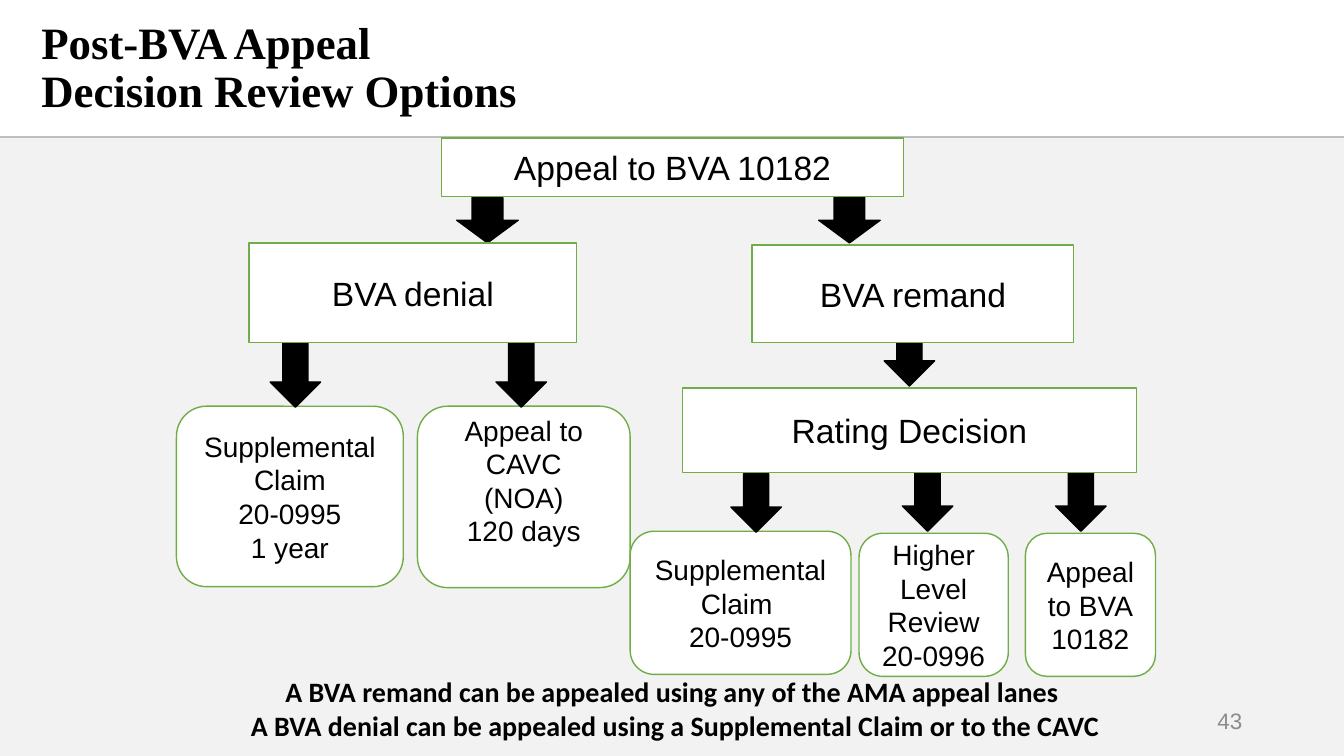
import pptx
import pptx.util
import pptx.dml.color
import pptx.enum.shapes
import pptx.enum.text
import pptx.oxml
from dataclasses import dataclass

Inches = pptx.util.Inches
SHAPE = pptx.enum.shapes.MSO_SHAPE
ALIGN = pptx.enum.text.PP_ALIGN
MIDDLE = pptx.enum.text.MSO_ANCHOR.MIDDLE


@dataclass(frozen=True)
class Theme:
    black: str = "000000"
    white: str = "FFFFFF"
    panel: str = "F2F2F2"
    rule: str = "BFBFBF"
    green: str = "70AD47"
    grey: str = "8C8C8C"
    heading: str = "Times New Roman"
    diagram: str = "Arial"
    note: str = "Calibri"
    title_size: int = 32
    step_size: int = 24
    option_size: int = 20
    number_size: int = 16


theme = Theme()


def write(frame, lines, font, size, color=theme.black, align=ALIGN.CENTER, bold=False):
    frame.word_wrap = True
    frame.vertical_anchor = MIDDLE
    frame.text = "\n".join(lines)
    for paragraph in frame.paragraphs:
        paragraph.alignment = align
        for run in paragraph.runs:
            run.font.name = font
            run.font.size = pptx.util.Pt(size)
            run.font.bold = bold
            run.font.color.rgb = pptx.dml.color.RGBColor.from_string(color)


def draw(kind, place, fill, line=None):
    shape = slide.shapes.add_shape(kind, *map(Inches, place))
    shape.shadow.inherit = False
    shape.fill.solid()
    shape.fill.fore_color.rgb = pptx.dml.color.RGBColor.from_string(fill)
    if line:
        shape.line.color.rgb = pptx.dml.color.RGBColor.from_string(line)
        shape.line.width = pptx.util.Pt(1)
    else:
        shape.line.fill.background()
    return shape


deck = pptx.Presentation()
deck.slide_width = Inches(13.33)
deck.slide_height = Inches(7.5)
slide = deck.slides.add_slide(deck.slide_layouts[5])

# Grey panel and the rule above it
draw(SHAPE.RECTANGLE, (0, 1.37, 13.33, 6.13), theme.panel)
header_rule = slide.shapes.add_connector(
    pptx.enum.shapes.MSO_CONNECTOR.STRAIGHT,
    Inches(0), Inches(1.36), Inches(13.33), Inches(1.36))
header_rule.line.color.rgb = pptx.dml.color.RGBColor.from_string(theme.rule)
header_rule.line.width = pptx.util.Pt(1.5)
header_rule._element.spPr.append(pptx.oxml.parse_xml(
    '<a:effectLst xmlns:a="http://schemas.openxmlformats.org/drawingml/2006/main"/>'))

# Title
title = slide.shapes.title
title.left, title.top = Inches(0.31), Inches(0.15)
title.width, title.height = Inches(9.24), Inches(1.07)
write(title.text_frame, ["Post-BVA Appeal \vDecision Review Options"],
      theme.heading, theme.title_size, align=ALIGN.LEFT, bold=True)
title.text_frame.auto_size = pptx.enum.text.MSO_AUTO_SIZE.NONE
title.text_frame.paragraphs[0].line_spacing = 0.9

# Review options; the last value is the bottom inset
options = [
    ((1.75, 4.03, 2.25, 1.79), ["Supplemental Claim", "20-0995", "1 year"], 0.05),
    ((4.14, 4.03, 2.11, 1.8), ["Appeal to CAVC", "(NOA)", "120 days"], 0.38),
    ((6.25, 5.27, 2.19, 1.42), ["Supplemental Claim ", "20-0995"], 0.05),
    ((8.52, 5.29, 1.48, 1.42), ["Higher Level Review", "20-0996"], 0.05),
    ((10.17, 5.29, 1.29, 1.42), ["Appeal to BVA", "10182"], 0.05),
]
for place, lines, bottom_inset in options:
    option = draw(SHAPE.ROUNDED_RECTANGLE, place, theme.white, theme.green)
    write(option.text_frame, lines, theme.diagram, theme.option_size)
    option.text_frame.margin_bottom = Inches(bottom_inset)

# Arrows, tucked under the step boxes
arrows = [
    (4.53, 1.96, 0.61, 0.45), (8.12, 1.96, 0.61, 0.45),
    (2.68, 3.21, 0.5, 0.83), (4.92, 3.21, 0.5, 0.83),
    (8.77, 3.25, 0.5, 0.58),
    (7.25, 4.7, 0.5, 0.58), (8.95, 4.69, 0.5, 0.58), (10.47, 4.69, 0.5, 0.58),
]
for place in arrows:
    draw(SHAPE.DOWN_ARROW, place, theme.black, theme.black)

# Steps of the appeal
steps = [
    ((4.38, 1.37, 4.58, 0.58), "Appeal to BVA 10182"),
    ((2.47, 2.41, 3.25, 0.99), "BVA denial"),
    ((7.46, 2.43, 3.19, 0.97), "BVA remand"),
    ((6.77, 3.85, 4.5, 0.84), "Rating Decision"),
]
for place, label in steps:
    step = draw(SHAPE.RECTANGLE, place, theme.white, theme.green)
    write(step.text_frame, [label], theme.diagram, theme.step_size)

# Closing note and slide number
note = slide.shapes.add_textbox(Inches(0), Inches(6.64), Inches(13.33), Inches(0.77))
write(note.text_frame,
      ["A BVA remand can be appealed using any of the AMA appeal lanes",
       " A BVA denial can be appealed using a Supplemental Claim or to the CAVC"],
      theme.note, theme.option_size, bold=True)
number = slide.shapes.add_textbox(Inches(9.42), Inches(6.95), Inches(3), Inches(0.4))
write(number.text_frame, ["43"], theme.diagram, theme.number_size, theme.grey, ALIGN.RIGHT)

deck.save("out.pptx")
